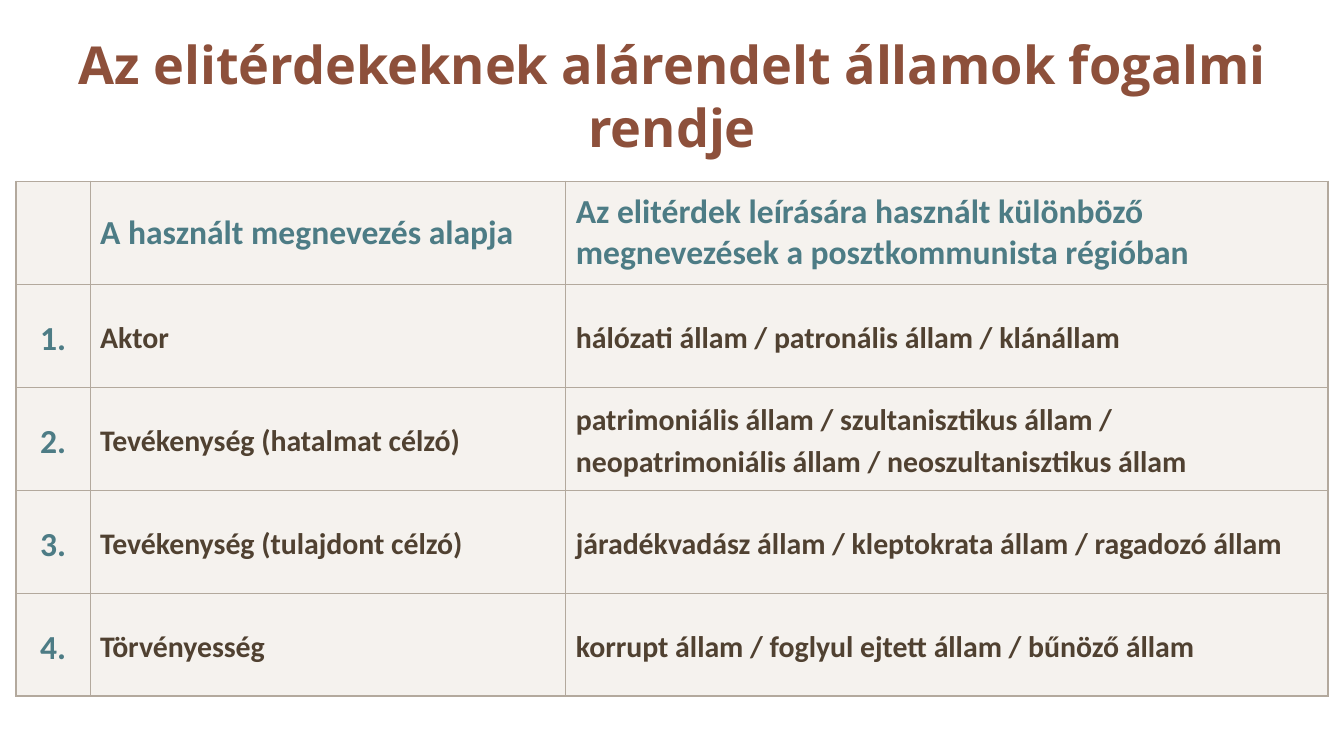
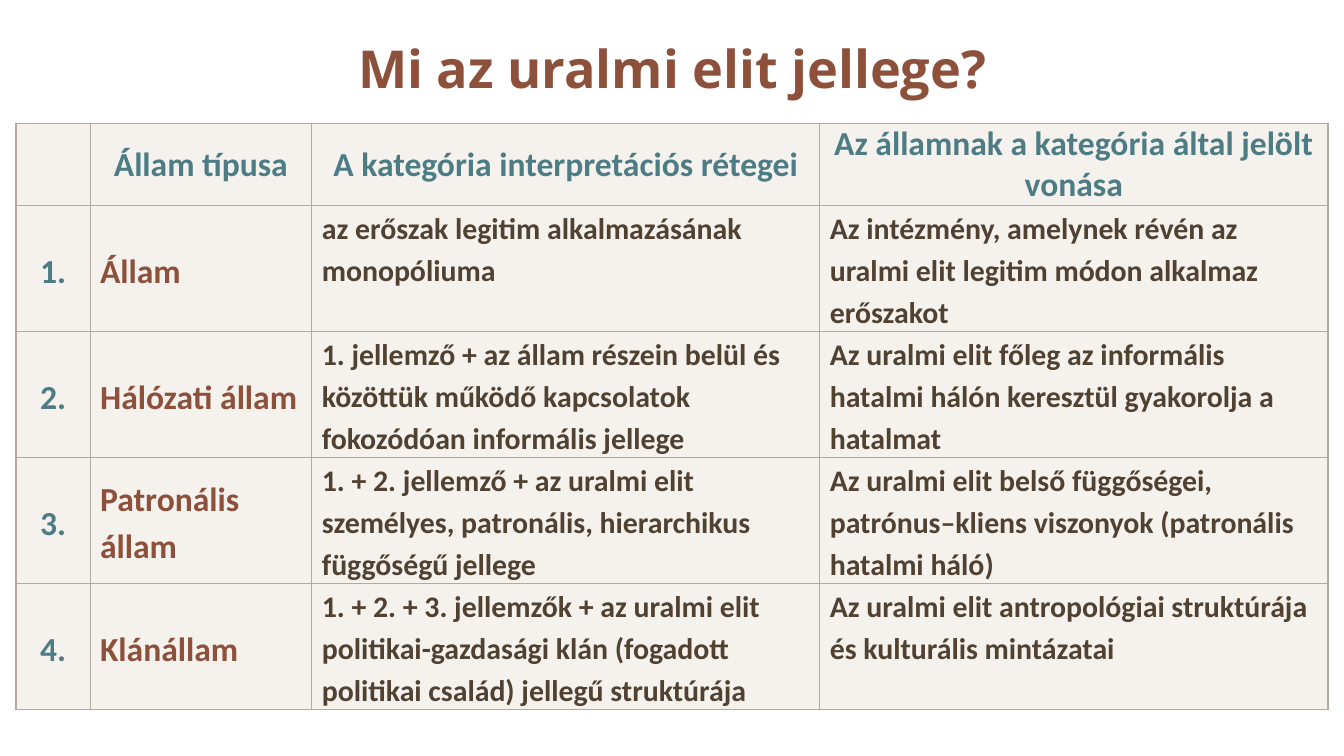
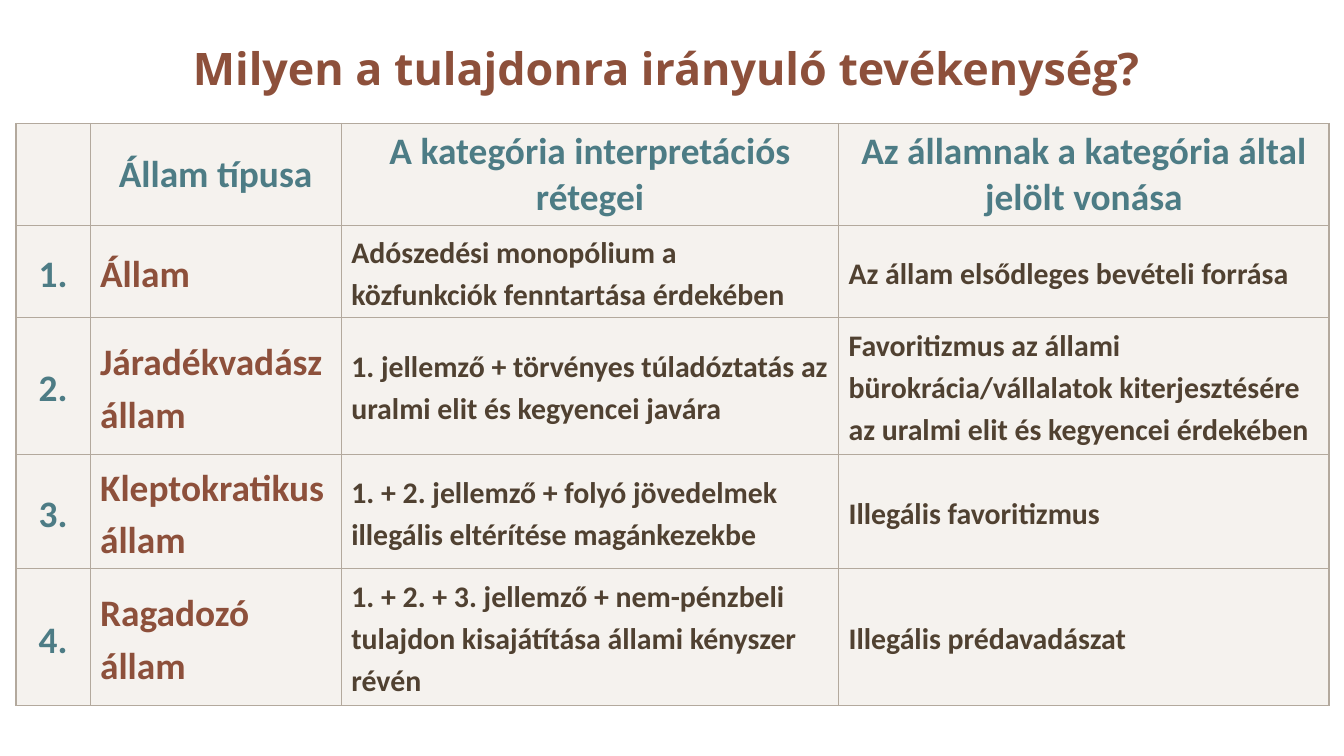
"""Build three slides on the concepts of states subordinated to elite interests."""
from lxml.etree import SubElement
from pptx import Presentation
from pptx.dml.color import RGBColor
from pptx.enum.text import MSO_ANCHOR as Anchor, MSO_AUTO_SIZE as AutoSize, PP_ALIGN as Align
from pptx.oxml import parse_xml
from pptx.oxml.ns import nsdecls, qn
from pptx.util import Inches, Pt

COLORS = {"title": "8D503B", "heading": "4D7C85", "body": "504131", "fill": "EFEAE4", "border": "B3A99D"}
LEFT, WIDTH, TITLE_HEIGHT = 0.12, 9.76, 1
ENTRY_SIZE = 16
SIDE_MARGINS = 0.15
STATE_HEADINGS = ["", "Állam típusa", "A kategória interpretációs rétegei",
                  "Az államnak a kategória által jelölt vonása"]

SLIDES = [
    {
        "title": "Az elitérdekeknek alárendelt államok fogalmi rendje",
        "title_top": 0.21, "title_size": 28, "table_top": 1.35, "label_size": 18,
        "heading_align": Align.LEFT, "entry_anchor": Anchor.MIDDLE, "number_margins": SIDE_MARGINS,
        "roles": ["number", "entry", "entry"],
        "columns": [0.55, 3.54, 5.67], "rows": [3.83 / 5] * 5,
        "cells": [
            ["", "A használt megnevezés alapja",
             "Az elitérdek leírására használt különböző megnevezések a posztkommunista régióban"],
            ["1.", "Aktor", "hálózati állam / patronális állam / klánállam"],
            ["2.", "Tevékenység (hatalmat célzó)",
             "patrimoniális állam / szultanisztikus állam / neopatrimoniális állam / neoszultanisztikus állam"],
            ["3.", "Tevékenység (tulajdont célzó)", "járadékvadász állam / kleptokrata állam / ragadozó állam"],
            ["4.", "Törvényesség", "korrupt állam / foglyul ejtett állam / bűnöző állam"],
        ],
    },
    {
        "title": "Mi az uralmi elit jellege?",
        "title_top": 0, "title_size": 28, "table_top": 0.92, "label_size": 18,
        "heading_align": Align.CENTER, "entry_anchor": Anchor.TOP, "number_margins": SIDE_MARGINS,
        "roles": ["number", "type", "entry", "entry"],
        "columns": [0.55, 1.65, 3.78, 3.78], "rows": [0.61] + [0.93] * 4,
        "cells": [
            STATE_HEADINGS,
            ["1.", "Állam", "az erőszak legitim alkalmazásának monopóliuma",
             "Az intézmény, amelynek révén az uralmi elit legitim módon alkalmaz erőszakot"],
            ["2.", "Hálózati állam",
             "1. jellemző + az állam részein belül és közöttük működő kapcsolatok fokozódóan informális jellege",
             "Az uralmi elit főleg az informális hatalmi hálón keresztül gyakorolja a hatalmat"],
            ["3.", "Patronális állam",
             "1. + 2. jellemző + az uralmi elit személyes, patronális, hierarchikus függőségű jellege",
             "Az uralmi elit belső függőségei, patrónus–kliens viszonyok (patronális hatalmi háló)"],
            ["4.", "Klánállam",
             "1. + 2. + 3. jellemzők + az uralmi elit politikai-gazdasági klán "
             "(fogadott politikai család) jellegű struktúrája",
             "Az uralmi elit antropológiai struktúrája és kulturális mintázatai"],
        ],
    },
    {
        "title": "Milyen a tulajdonra irányuló tevékenység? ",
        "title_top": 0, "title_size": 24, "table_top": 0.92, "label_size": 20,
        "heading_align": Align.CENTER, "entry_anchor": Anchor.MIDDLE, "number_margins": 0.2,
        "roles": ["number", "type", "entry", "entry"],
        "columns": [0.55, 1.87, 3.7, 3.65], "rows": [0.76, 0.68, 1.02, 0.85, 1.02],
        "cells": [
            STATE_HEADINGS,
            ["1.", "Állam", "Adószedési monopólium a közfunkciók fenntartása érdekében",
             "Az állam elsődleges bevételi forrása"],
            ["2.", "Járadékvadász állam",
             "1. jellemző + törvényes túladóztatás az uralmi elit és kegyencei javára",
             "Favoritizmus az állami bürokrácia/vállalatok kiterjesztésére az uralmi elit és kegyencei érdekében"],
            ["3.", "Kleptokratikus állam",
             "1. + 2. jellemző + folyó jövedelmek illegális eltérítése magánkezekbe", "Illegális favoritizmus"],
            ["4.", "Ragadozó állam",
             "1. + 2. + 3. jellemző + nem-pénzbeli tulajdon kisajátítása állami kényszer révén",
             "Illegális prédavadászat"],
        ],
    },
]


def format_text(text_frame, text, font_name, size, color, align, spacing=None):
    text_frame.text = text
    paragraph = text_frame.paragraphs[0]
    paragraph.alignment = align
    paragraph.line_spacing = spacing
    for run in paragraph.runs:
        run.font.name = font_name
        run.font.size = Pt(size)
        run.font.bold = True
        run.font.color.rgb = RGBColor.from_string(COLORS[color])


def add_title(slide, content):
    title = slide.shapes.title
    title.left, title.top = Inches(LEFT), Inches(content["title_top"])
    title.width, title.height = Inches(WIDTH), Inches(TITLE_HEIGHT)
    format_text(title.text_frame, content["title"], "Open Sans", content["title_size"], "title", Align.CENTER)
    title.text_frame.word_wrap = True
    title.text_frame.auto_size = AutoSize.NONE
    title.text_frame.vertical_anchor = Anchor.MIDDLE


def paint_cell(cell, outer_edges):
    cell.fill.solid()
    cell.fill.fore_color.rgb = RGBColor.from_string(COLORS["fill"])
    properties = cell._tc.get_or_add_tcPr()
    color = properties.find(qn("a:solidFill")).find(qn("a:srgbClr"))
    SubElement(color, qn("a:alpha")).set("val", "60000")
    for position, edge in enumerate("LRTB"):
        width = Pt(1 if edge in outer_edges else 0.5)
        properties.insert(position, parse_xml(
            f'<a:ln{edge} {nsdecls("a")} w="{width}"><a:solidFill>'
            f'<a:srgbClr val="{COLORS["border"]}"/></a:solidFill></a:ln{edge}>'))


def add_state_table(slide, content):
    columns, rows, label_size = content["columns"], content["rows"], content["label_size"]
    table = slide.shapes.add_table(
        len(rows), len(columns), Inches(LEFT), Inches(content["table_top"]),
        Inches(WIDTH), Inches(sum(rows))).table
    table.first_row = table.horz_banding = False
    for column, width in zip(table.columns, columns):
        column.width = Inches(width)
    for row, height in zip(table.rows, rows):
        row.height = Inches(height)

    styles = {
        "heading": (label_size, "heading", content["heading_align"], None),
        "number": (label_size, "heading", Align.CENTER, 1.15),
        "type": (label_size, "title", Align.LEFT, 1.15),
        "entry": (ENTRY_SIZE, "body", Align.LEFT, 1.15),
    }
    for row_index, texts in enumerate(content["cells"]):
        for column_index, text in enumerate(texts):
            cell = table.cell(row_index, column_index)
            role = content["roles"][column_index] if row_index else "heading"
            margins = content["number_margins"] if role == "number" else SIDE_MARGINS
            cell.margin_left = cell.margin_right = Inches(margins / 2)
            cell.margin_top = cell.margin_bottom = 0
            cell.vertical_anchor = content["entry_anchor"] if role == "entry" else Anchor.MIDDLE
            format_text(cell.text_frame, text, "Calibri", *styles[role])
            outer = {"L": column_index == 0, "R": column_index == len(columns) - 1,
                     "T": row_index == 0, "B": row_index == len(rows) - 1}
            paint_cell(cell, [edge for edge, is_outer in outer.items() if is_outer])


def main():
    presentation = Presentation()
    presentation.slide_width = Inches(10)
    presentation.slide_height = presentation.slide_width * 9 // 16
    for content in SLIDES:
        slide = presentation.slides.add_slide(presentation.slide_layouts[5])
        add_title(slide, content)
        add_state_table(slide, content)
    presentation.save("out.pptx")


if __name__ == "__main__":
    main()
